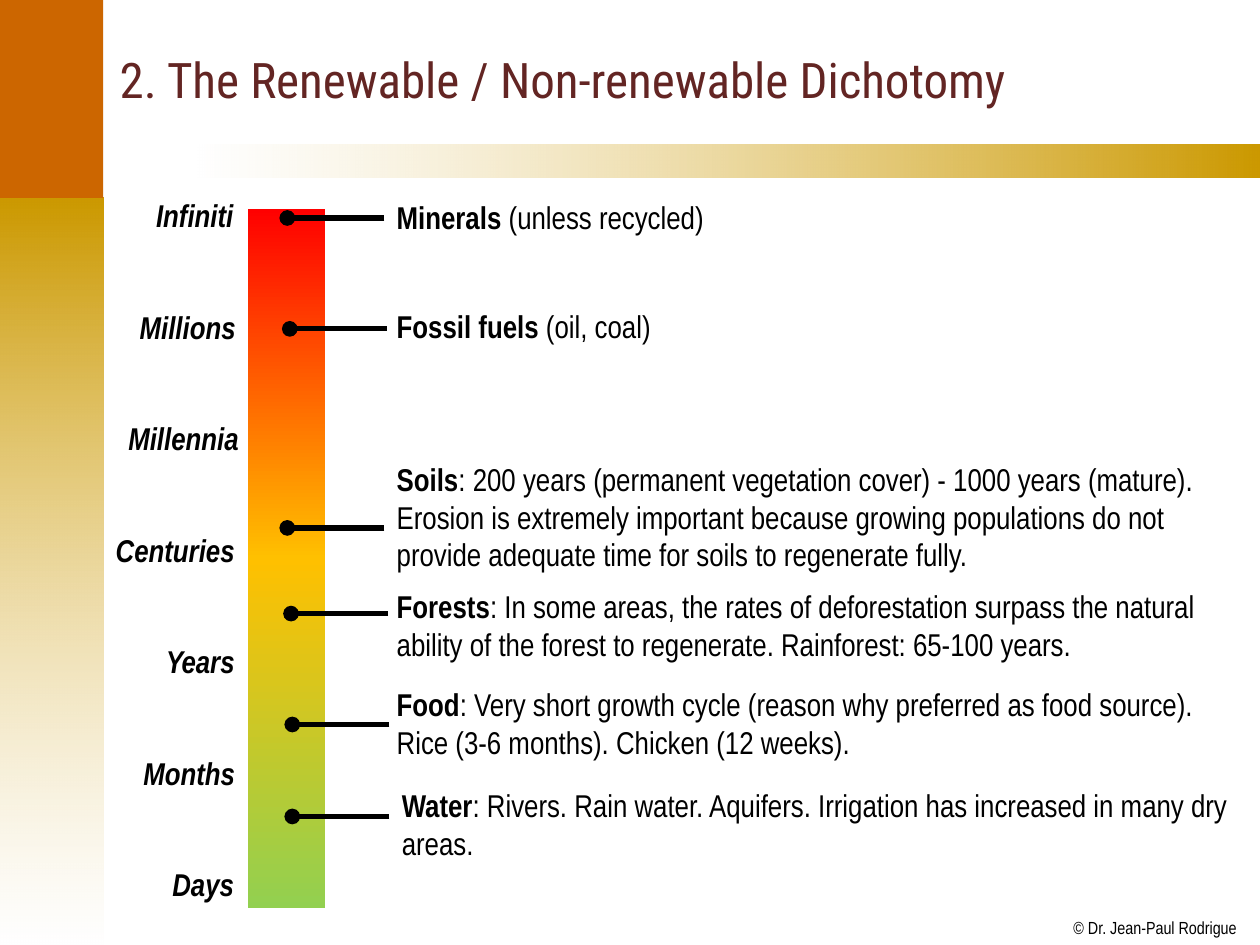
from lxml import etree
from pptx import Presentation
from pptx.dml.color import RGBColor
from pptx.enum import shapes, text
from pptx.oxml import parse_xml
from pptx.oxml.ns import nsdecls, qn
from pptx.util import Inches, Pt

# Content
TITLE = "2. The Renewable / Non-renewable Dichotomy"
CREDIT = "© Dr. Jean-Paul Rodrigue"
# time scale, top to bottom: label, left, width
SCALE = [
    ("Infiniti", 1.14, 0.82),
    ("Millions", 1.01, 0.97),
    ("Millennia", 0.92, 1.09),
    ("Centuries", 0.82, 1.16),
    ("Years", 1.22, 0.76),
    ("Months", 1.04, 0.94),
    ("Days", 1.27, 0.7),
]
# resource, remark, further paragraphs, text left, top, height, marker x, y
RESOURCES = [
    ("Minerals", " (unless recycled)", [], 3.05, 1.52, 0.4, 2.28, 1.73),
    ("Fossil fuels", " (oil, coal)", [], 3.05, 2.39, 0.4, 2.3, 2.61),
    ("Soils", ": 200 years (permanent vegetation cover) - 1000 years (mature).",
     ["Erosion is extremely important because growing populations do not "
      "provide adequate time for soils to regenerate fully."],
     3.05, 3.6, 1.01, 2.28, 4.19),
    ("Forests", ": In some areas, the rates of deforestation surpass the natural "
     "ability of the forest to regenerate. Rainforest: 65-100 years.", [],
     3.05, 4.61, 0.71, 2.31, 4.87),
    ("Food", ": Very short growth cycle (reason why preferred as food source). "
     "Rice (3-6 months). Chicken (12 weeks).", [],
     3.05, 5.39, 0.71, 2.32, 5.75),
    ("Water", ": Rivers. Rain water. Aquifers. Irrigation has increased in many "
     "dry areas.", [], 3.09, 6.19, 0.71, 2.32, 6.48),
]
COLORS = {"gold": "CC9900", "orange": "CC6600", "white": "FFFFFF", "title": "632523",
          "black": "000000", "red": "FF0000", "amber": "FFC000", "green": "92D050"}
BODY_FONT, TITLE_FONT = "Arial Narrow", "Roboto Condensed"
SCALE_TOP, SCALE_STEP = 1.51, 0.885
LEADER = 0.77


def rgb(name):
    return RGBColor.from_string(COLORS[name])


def set_font(p, size, name=BODY_FONT, color="black"):
    p.font.size, p.font.name = Pt(size), name
    p.font.color.rgb = rgb(color)


def add_rect(s, box, color=None, stops=None, angle=0):
    """Plain rectangle; stops are (percent, colour, opacity percent)."""
    sp = s.shapes.add_shape(shapes.MSO_SHAPE.RECTANGLE, *map(Inches, box))
    sp.shadow.inherit = False
    sp.line.fill.background()
    if color:
        sp.fill.solid()
        sp.fill.fore_color.rgb = rgb(color)
        return
    gs = "".join(
        f'<a:gs pos="{pos * 1000}"><a:srgbClr val="{COLORS[c]}">'
        f'<a:alpha val="{opacity * 1000}"/></a:srgbClr></a:gs>'
        for pos, c, opacity in stops)
    grad = parse_xml(f'<a:gradFill {nsdecls("a")} rotWithShape="1"><a:gsLst>{gs}</a:gsLst>'
                     f'<a:lin ang="{angle * 60000}" scaled="0"/></a:gradFill>')
    sp._element.spPr.find(qn("a:prstGeom")).addnext(grad)


def add_text(s, box, wrap=True):
    tf = s.shapes.add_textbox(*map(Inches, box)).text_frame
    tf.word_wrap = wrap
    tf.auto_size = text.MSO_AUTO_SIZE.SHAPE_TO_FIT_TEXT
    return tf


def add_leader(s, x, y):
    line = s.shapes.add_connector(shapes.MSO_CONNECTOR.STRAIGHT,
                                  *map(Inches, (x + LEADER, y, x, y)))
    line.line.width = Pt(3)
    line.line.color.rgb = rgb("black")
    etree.SubElement(line.line._get_or_add_ln(), qn("a:tailEnd"), type="oval")
    etree.SubElement(line._element.spPr, qn("a:effectLst"))


def main():
    prs = Presentation()
    prs.slide_width, prs.slide_height = Inches(10), Inches(7.5)
    s = prs.slides.add_slide(prs.slide_layouts[5])

    # Background bands
    add_rect(s, (-0.01, 1.57, 0.83, 5.93),
             stops=[(0, "gold", 100), (100, "white", 51)], angle=90)
    add_rect(s, (1.57, 1.15, 8.43, 0.26),
             stops=[(0, "white", 50), (100, "gold", 100)])
    add_rect(s, (-0.01, -0.01, 0.83, 1.58), "orange")

    # Credit
    tf = add_text(s, (8.52, 7.28, 1.3, 0.17), wrap=False)
    tf.margin_left = tf.margin_right = tf.margin_top = tf.margin_bottom = 0
    tf.text = CREDIT
    set_font(tf.paragraphs[0], 10)

    # Title
    title = s.shapes.title
    title.left, title.top, title.width, title.height = map(Inches, (0.85, 0.11, 8.98, 1.04))
    tf = title.text_frame
    tf.text = TITLE
    tf.vertical_anchor = text.MSO_ANCHOR.MIDDLE
    tf.paragraphs[0].alignment = text.PP_ALIGN.LEFT
    set_font(tf.paragraphs[0], 28, TITLE_FONT, "title")

    # Time scale
    add_rect(s, (1.97, 1.66, 0.61, 5.55), angle=90,
             stops=[(0, "red", 100), (50, "amber", 100), (100, "green", 100)])
    for i, (label, left, width) in enumerate(SCALE):
        tf = add_text(s, (left, SCALE_TOP + i * SCALE_STEP, width, 0.4), wrap=False)
        tf.text = label
        p = tf.paragraphs[0]
        set_font(p, 18)
        p.font.bold = p.font.italic = True

    # Resources with their markers on the scale
    for name, remark, more, left, top, height, x, y in RESOURCES:
        add_leader(s, x, y)
        tf = add_text(s, (left, top, 6.78, height))
        p = tf.paragraphs[0]
        r = p.add_run()
        r.text, r.font.bold = name, True
        p.add_run().text = remark
        for extra in more:
            tf.add_paragraph().text = extra
        for p in tf.paragraphs:
            set_font(p, 18)

    prs.save("out.pptx")


if __name__ == "__main__":
    main()
